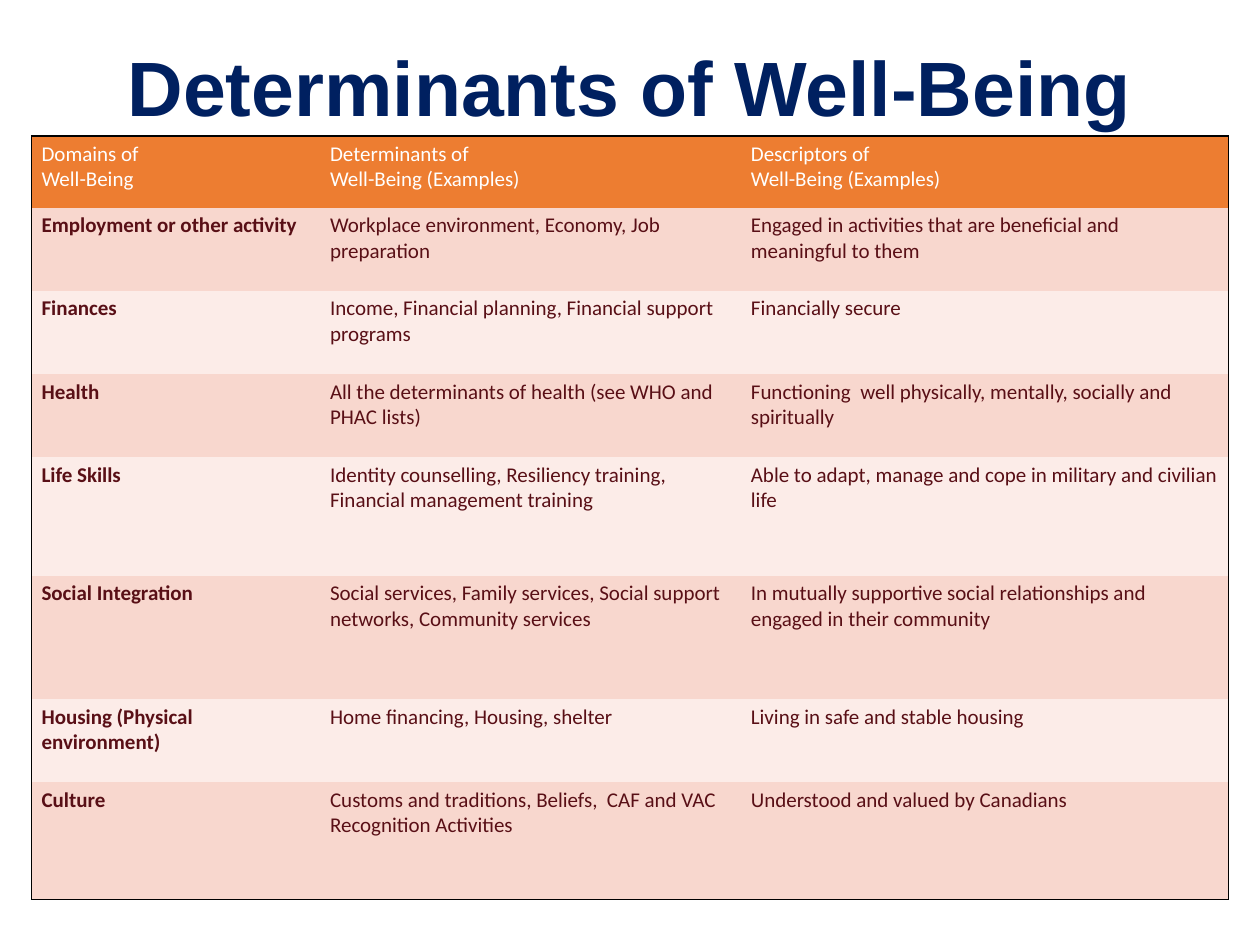
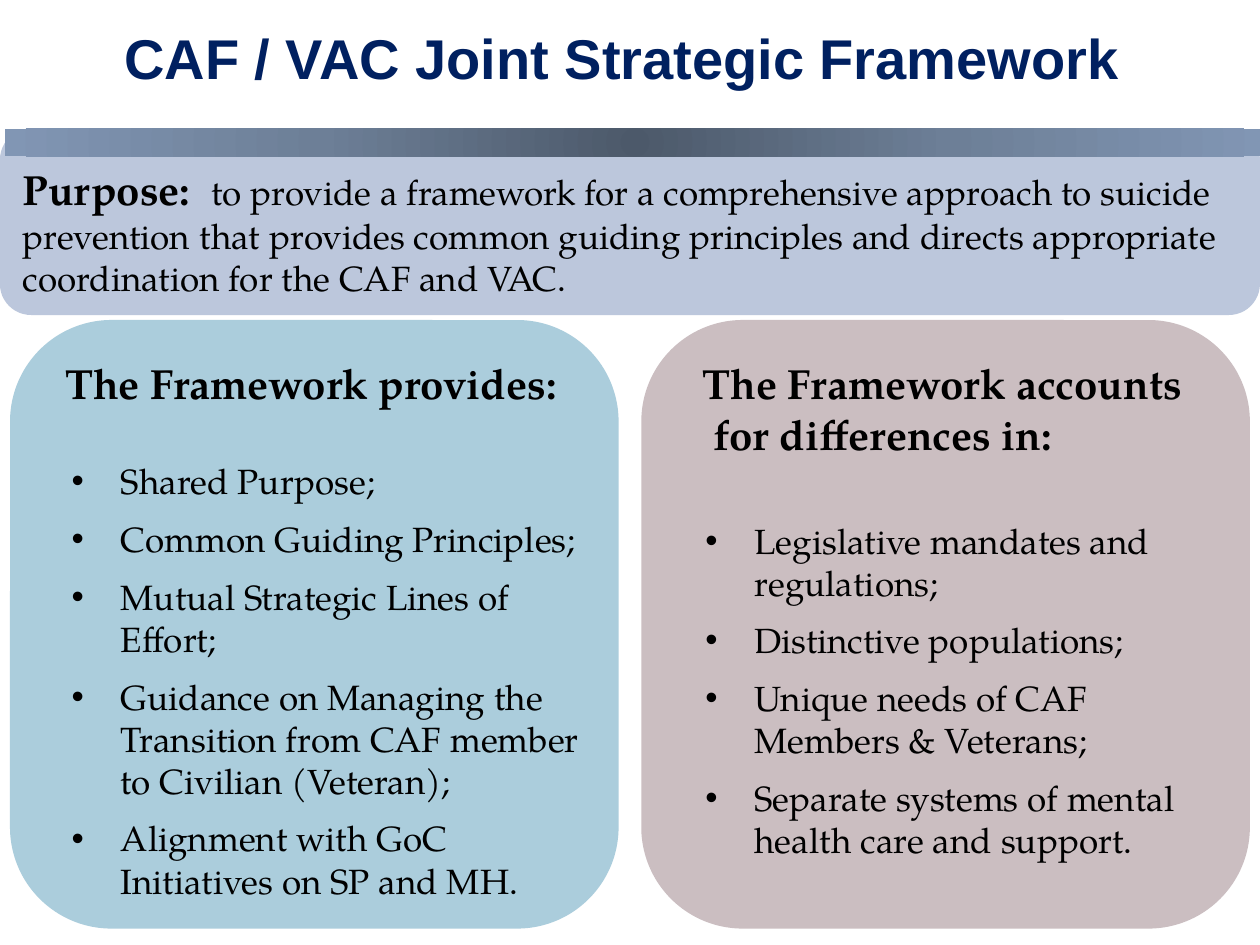
from lxml import etree
from pptx import Presentation
from pptx.dml.color import RGBColor
from pptx.enum import shapes, text
from pptx.oxml import ns, parse_xml
from pptx.util import Inches, Pt

NAVY = RGBColor(0x00, 0x20, 0x60)
BLACK = RGBColor(0x00, 0x00, 0x00)
WHITE = RGBColor(0xFF, 0xFF, 0xFF)
ORANGE = RGBColor(0xED, 0x7D, 0x31)
MAROON = RGBColor(0x59, 0x0F, 0x16)
ROW_TINTS = (RGBColor(0xF8, 0xD7, 0xCE), RGBColor(0xFC, 0xEC, 0xE8))
PANEL_BLUE = RGBColor(0xAB, 0xCD, 0xDC)
PANEL_MAUVE = RGBColor(0xCB, 0xBE, 0xC1)
PURPOSE_BLUE = RGBColor(0xBC, 0xC7, 0xDC)
BAR_STOPS = ((0, RGBColor(0x4C, 0x59, 0x6A)), (50, RGBColor(0x6D, 0x7F, 0x97)),
             (100, RGBColor(0x81, 0x96, 0xB4)))

TITLE_FONT, TABLE_FONT, BODY_FONT = "Arial", "Calibri", "TeX Gyre Pagella"
NO_STYLE = "{2D5ABB26-0587-4C30-8999-92F81FD0307C}"

COLUMN_WIDTHS = (2.29, 3.34, 3.87)
ROW_HEIGHTS = (0.57, 0.66, 0.66, 0.66, 0.94, 0.98, 0.66, 0.93)
HEADINGS = (("Domains of", "Well-Being"),
            ("Determinants of", "Well-Being (Examples)"),
            ("Descriptors of", "Well-Being (Examples)"))
DOMAINS = (
    ("Employment or other activity",
     "Workplace environment, Economy, Job preparation",
     "Engaged in activities that are beneficial and meaningful to them"),
    ("Finances",
     "Income, Financial planning, Financial support programs",
     "Financially secure"),
    ("Health",
     "All the determinants of health (see WHO and PHAC lists)",
     "Functioning  well physically, mentally, socially and spiritually"),
    ("Life Skills",
     "Identity counselling, Resiliency training, Financial management training",
     "Able to adapt, manage and cope in military and civilian life"),
    ("Social Integration",
     "Social services, Family services, Social support networks, Community services",
     "In mutually supportive social relationships and engaged in their community"),
    ("Housing (Physical environment)",
     "Home financing, Housing, shelter",
     "Living in safe and stable housing"),
    ("Culture",
     "Customs and traditions, Beliefs,  CAF and VAC Recognition Activities",
     "Understood and valued by Canadians"),
)
PURPOSE = ("to provide a framework for a comprehensive approach to suicide "
           "prevention that provides common guiding principles and directs "
           "appropriate coordination for the CAF and VAC.")
PROVIDES = ("Shared Purpose;", "Common Guiding Principles;",
            "Mutual Strategic Lines of Effort;",
            "Guidance on Managing the Transition from CAF member to Civilian (Veteran);",
            "Alignment with GoC Initiatives on SP and MH.")
DIFFERENCES = ("Legislative mandates and regulations;", "Distinctive populations;",
               "Unique needs of CAF Members & Veterans;",
               "Separate systems of mental health care and support.")


# Shared helpers; every box is (left, top, width, height) in inches
def lengths(box):
    return [Inches(value) for value in box]


def add_run(paragraph, words, size, font, color, bold=False):
    run = paragraph.add_run()
    run.text = words
    run.font.size, run.font.name, run.font.bold = Pt(size), font, bold
    run.font.color.rgb = color


def add_paragraphs(frame, count):
    """Return count paragraphs, starting with the one the frame has."""
    return [frame.paragraphs[0]] + [frame.add_paragraph() for _ in range(count - 1)]


def add_frame(slide, box):
    frame = slide.shapes.add_textbox(*lengths(box)).text_frame
    frame.word_wrap = True
    return frame


def add_block(slide, box, color=None, rounded=True):
    kind = shapes.MSO_SHAPE.ROUNDED_RECTANGLE if rounded else shapes.MSO_SHAPE.RECTANGLE
    block = slide.shapes.add_shape(kind, *lengths(box))
    block.shadow.inherit = False
    block.line.fill.background()
    if color is not None:
        block.fill.solid()
        block.fill.fore_color.rgb = color
    return block


def add_title(slide, box, words, size):
    frame = add_frame(slide, box)
    frame.vertical_anchor = text.MSO_ANCHOR.MIDDLE
    title = frame.paragraphs[0]
    title.alignment = text.PP_ALIGN.CENTER
    title.line_spacing = 0.9
    add_run(title, words, size, TITLE_FONT, NAVY, True)


# Well-being table
def add_border(cell, sides):
    """Draw a thin black line on the named sides, given in the order L R T B."""
    properties = cell._tc.get_or_add_tcPr()
    for position, side in enumerate(sides):
        properties.insert(position, parse_xml(
            f'<a:ln{side} {ns.nsdecls("a")} w="12700"><a:solidFill>'
            f'<a:srgbClr val="{BLACK}"/></a:solidFill></a:ln{side}>'))


def fill_cell(cell, lines, background, color, bold):
    cell.margin_left = cell.margin_right = Inches(0.08)
    cell.margin_top = cell.margin_bottom = Inches(0.04)
    cell.fill.solid()
    cell.fill.fore_color.rgb = background
    for paragraph, line in zip(add_paragraphs(cell.text_frame, len(lines)), lines):
        add_run(paragraph, line, 12, TABLE_FONT, color, bold)


def add_domain_table(slide, box):
    last_row, last_column = len(DOMAINS), len(HEADINGS) - 1
    table = slide.shapes.add_table(last_row + 1, last_column + 1, *lengths(box)).table
    table.first_row = table.horz_banding = False
    table._tbl.tblPr.find(ns.qn("a:tableStyleId")).text = NO_STYLE
    for column, width in zip(table.columns, COLUMN_WIDTHS):
        column.width = Inches(width)
    for row, height in zip(table.rows, ROW_HEIGHTS):
        row.height = Inches(height)

    for c, heading in enumerate(HEADINGS):
        fill_cell(table.cell(0, c), heading, ORANGE, WHITE, False)
    for r, domain in enumerate(DOMAINS, 1):
        for c, words in enumerate(domain):
            fill_cell(table.cell(r, c), [words], ROW_TINTS[(r - 1) % 2], MAROON, c == 0)

    # Outer frame only
    for r in range(last_row + 1):
        for c in range(last_column + 1):
            edges = {"L": c == 0, "R": c == last_column, "T": r == 0, "B": r == last_row}
            add_border(table.cell(r, c), [side for side, outer in edges.items() if outer])


# Framework regions
def add_bullet(paragraph):
    properties = paragraph._p.get_or_add_pPr()
    properties.set("marL", str(Inches(0.69)))
    properties.set("indent", str(Inches(-0.39)))
    etree.SubElement(properties, ns.qn("a:buFont")).set("typeface", "Arial")
    etree.SubElement(properties, ns.qn("a:buChar")).set("char", "•")


def add_panel(slide, box, color, heading, heading_x, points, points_box):
    """Rounded panel; heading_x and points_box are offsets inside the panel."""
    left, top, width, height = box
    add_block(slide, box, color)

    heading_frame = add_frame(slide, (left + heading_x, top + 0.25, 4.2, 0.81))
    for paragraph, line in zip(add_paragraphs(heading_frame, len(heading)), heading):
        add_run(paragraph, line, 24, BODY_FONT, BLACK, True)

    x, y, points_width = points_box
    points_frame = add_frame(slide, (left + x, top + y, points_width, height - y))
    for index, paragraph in enumerate(add_paragraphs(points_frame, len(points))):
        add_bullet(paragraph)
        if index:
            paragraph.space_before = Pt(6)
        paragraph.space_after = Pt(3)
        add_run(paragraph, points[index], 20, BODY_FONT, BLACK)


def add_purpose(slide, box):
    left, top, width, height = box
    add_block(slide, box, PURPOSE_BLUE)
    frame = add_frame(slide, (left + 0.08, top + 0.23, width - 0.08, height - 0.23))
    purpose = frame.paragraphs[0]
    add_run(purpose, "Purpose:  ", 24, BODY_FONT, BLACK, True)
    add_run(purpose, PURPOSE, 20, BODY_FONT, BLACK)


def add_gradient_bar(slide, box):
    bar = add_block(slide, box, rounded=False)
    stops = "".join(f'<a:gs pos="{percent * 1000}"><a:srgbClr val="{color}"/></a:gs>'
                    for percent, color in BAR_STOPS)
    gradient = parse_xml(
        f'<a:gradFill {ns.nsdecls("a")} rotWithShape="1"><a:gsLst>{stops}</a:gsLst>'
        '<a:path path="circle"><a:fillToRect l="50000" t="50000" r="50000" b="50000"/>'
        '</a:path></a:gradFill>')
    bar._element.spPr.find(ns.qn("a:prstGeom")).addnext(gradient)


# Slides
def build_determinants(slide):
    add_title(slide, (0, 0, 10, 1.45), "Determinants of Well-Being", 44)
    add_domain_table(slide, (0.25, 1.08, 9.5, 6.08))


def build_framework(slide):
    add_panel(slide, (5.09, 2.54, 4.83, 4.83), PANEL_MAUVE,
              ("The Framework accounts", " for differences in:"), 0.39,
              DIFFERENCES, (0.11, 1.53, 4.61))
    add_panel(slide, (0.08, 2.54, 4.83, 4.83), PANEL_BLUE,
              ("The Framework provides:",), 0.34, PROVIDES, (0.09, 1.06, 4.67))
    add_title(slide, (0, 0.17, 10, 0.64), "CAF / VAC Joint Strategic Framework ", 32)
    add_purpose(slide, (0, 1.02, 10, 1.48))
    add_gradient_bar(slide, (0.04, 1.02, 10, 0.22))


def main():
    deck = Presentation()
    deck.slide_width, deck.slide_height = Inches(10), Inches(7.5)
    for build in (build_determinants, build_framework):
        build(deck.slides.add_slide(deck.slide_layouts[6]))
    deck.save("out.pptx")


if __name__ == "__main__":
    main()
